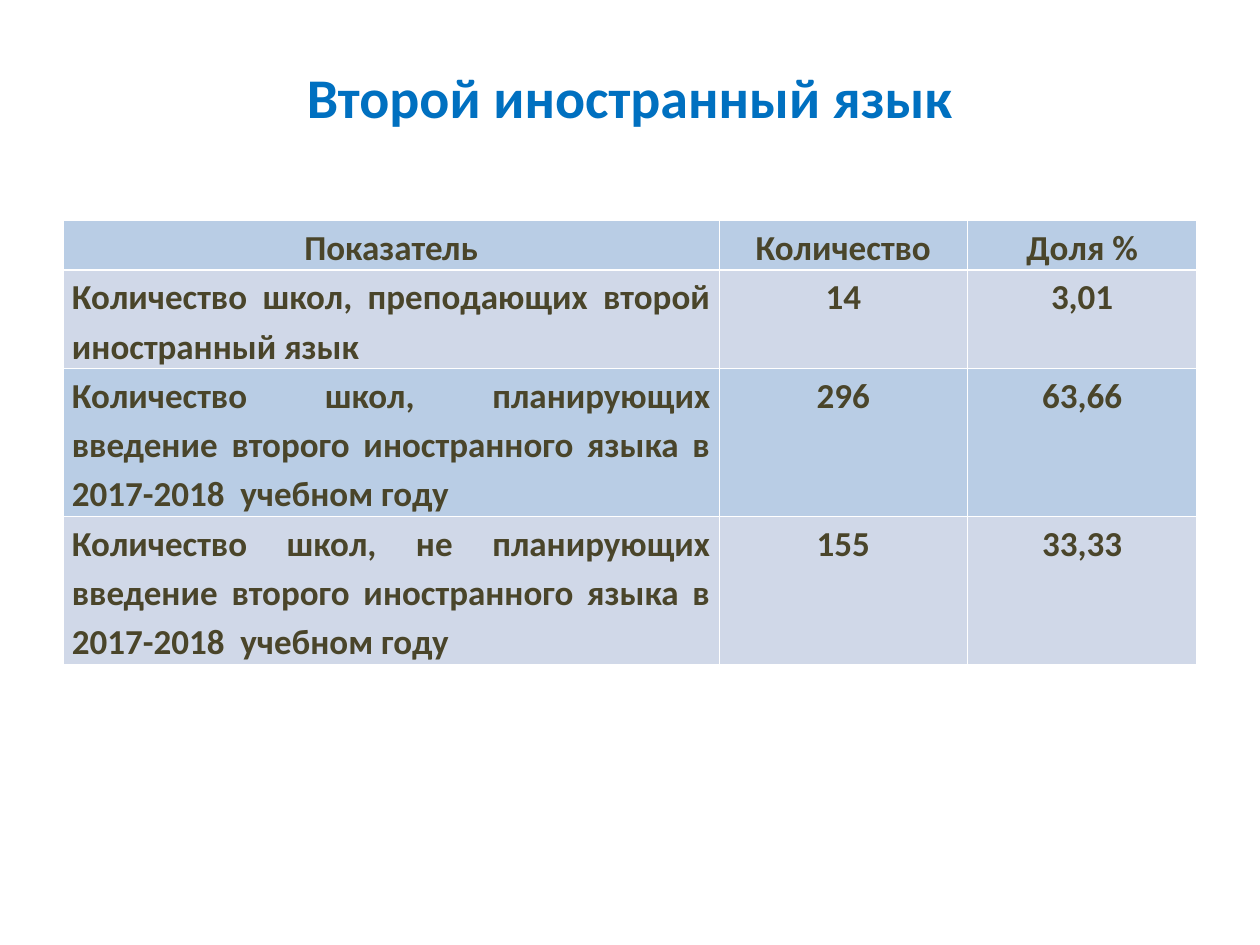
from pptx import Presentation
from pptx.dml.color import RGBColor
from pptx.enum.text import MSO_ANCHOR, PP_ALIGN
from pptx.util import Cm, Pt

CENTER, JUSTIFY = PP_ALIGN.CENTER, PP_ALIGN.JUSTIFY
MIDDLE = MSO_ANCHOR.MIDDLE

TITLE = "Второй иностранный язык"
ROWS = [
    ("Показатель", "Количество", "Доля %"),
    ("Количество школ, преподающих второй иностранный язык", "14", "3,01"),
    ("Количество школ, планирующих введение второго иностранного языка "
     "в 2017-2018  учебном году", "296", "63,66"),
    ("Количество школ, не планирующих введение второго иностранного языка "
     "в 2017-2018  учебном году", "155", "33,33"),
]
ROW_LINES = [1, 2, 3, 3]
LINE_HEIGHT = 0.99
COL_WIDTHS = [13.23, 5, 4.63]
BANDS = ["B9CDE5", "D0D8E8"]
LEFT, WIDTH = 1.27, 22.86


def color(value):
    return RGBColor.from_string(value)


def format_paragraph(p, size, hex_color, align):
    p.alignment = align
    p.font.name = "Calibri"
    p.font.size = Pt(size)
    p.font.bold = True
    p.font.color.rgb = color(hex_color)


def add_title(s):
    title = s.shapes.title
    title.left, title.top = Cm(LEFT), Cm(0.76)
    title.width, title.height = Cm(WIDTH), Cm(2.36)
    tf = title.text_frame
    tf.text = TITLE
    tf.vertical_anchor = MIDDLE
    format_paragraph(tf.paragraphs[0], 32, "0070C0", CENTER)


def add_indicator_table(s):
    table = s.shapes.add_table(
        len(ROWS), len(COL_WIDTHS), Cm(LEFT), Cm(4.45),
        Cm(WIDTH), Cm(LINE_HEIGHT * sum(ROW_LINES))).table
    for column, width in zip(table.columns, COL_WIDTHS):
        column.width = Cm(width)
    for i, (values, lines) in enumerate(zip(ROWS, ROW_LINES)):
        table.rows[i].height = Cm(LINE_HEIGHT * lines)
        for j, value in enumerate(values):
            cell = table.cell(i, j)
            cell.text = value
            cell.margin_left = cell.margin_right = Cm(0.18)
            cell.margin_top = cell.margin_bottom = 0
            cell.fill.solid()
            cell.fill.fore_color.rgb = color(BANDS[i % 2])
            p = cell.text_frame.paragraphs[0]
            p.line_spacing = 1.15
            format_paragraph(p, 20, "4A452A", JUSTIFY if i and not j else CENTER)


def main():
    prs = Presentation()
    prs.slide_width, prs.slide_height = Cm(25.4), Cm(19.05)
    s = prs.slides.add_slide(prs.slide_layouts[5])
    add_title(s)
    add_indicator_table(s)
    prs.save("out.pptx")


if __name__ == "__main__":
    main()
